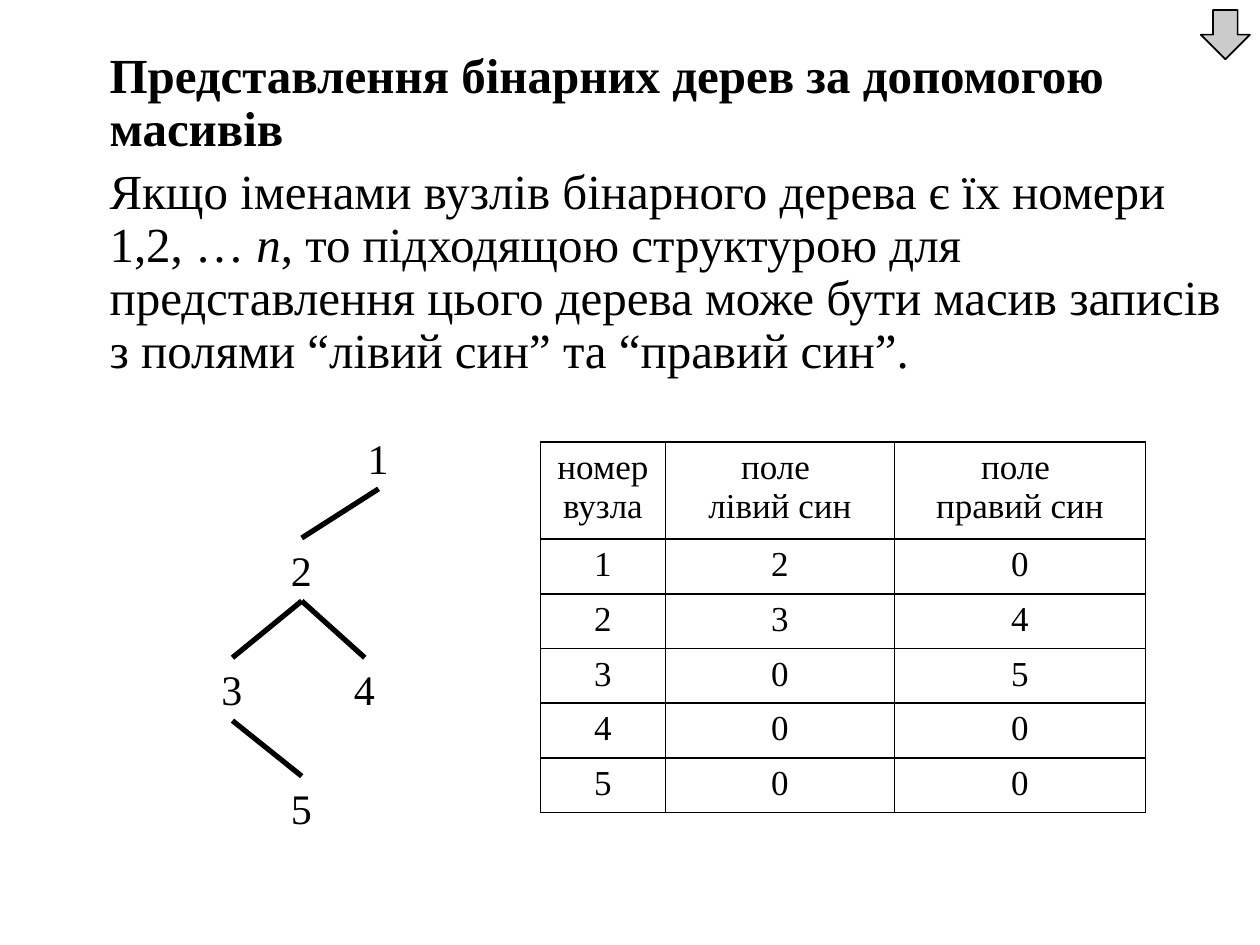
"""Build the slide on storing a binary tree in an array of records."""
import pptx
import pptx.dml.color
import pptx.enum.shapes
import pptx.enum.text
import pptx.oxml
import pptx.oxml.ns
import pptx.util
from pptx.util import Inches

BLACK = "000000"


def color(value):
    return pptx.dml.color.RGBColor.from_string(value)


def style(paragraph, size):
    for run in paragraph.runs:
        run.font.name = "Times New Roman"
        run.font.size = pptx.util.Pt(size)
        run.font.color.rgb = color(BLACK)


deck = pptx.Presentation()
deck.slide_width, deck.slide_height = Inches(10), Inches(7.5)
slide = deck.slides.add_slide(deck.slide_layouts[6])

body = slide.shapes.add_textbox(Inches(0), Inches(0.36), Inches(10), Inches(2.89)).text_frame
body.word_wrap = True
body.margin_left = body.margin_right = Inches(0.2)
heading = body.paragraphs[0]
heading.text = "\tПредставлення бінарних дерев за допомогою масивів"
heading.runs[0].font.bold = True
explanation = body.add_paragraph()
for wording in (
    "\tЯкщо іменами вузлів бінарного дерева є їх номери 1,2, … ",
    "n",
    ", то підходящою структурою для представлення цього дерева може бути масив записів "
    "з полями “лівий син” та “правий син”.",
):
    run = explanation.add_run()
    run.text = wording
    run.font.italic = wording == "n"
for paragraph in body.paragraphs:
    paragraph.line_spacing = 0.9
    paragraph.space_before = pptx.util.Pt(5.6)
    indents = paragraph._p.get_or_add_pPr()
    indents.set("marL", str(Inches(0.67)))
    indents.set("indent", str(Inches(-0.67)))
    style(paragraph, 28)

down_arrow = slide.shapes.add_shape(
    pptx.enum.shapes.MSO_SHAPE.DOWN_ARROW, Inches(9.53), Inches(0.08), Inches(0.39), Inches(0.39)
)
down_arrow.shadow.inherit = False
down_arrow.fill.solid()
down_arrow.fill.fore_color.rgb = color("CBCBCB")
down_arrow.line.color.rgb = color(BLACK)
down_arrow.line.width = pptx.util.Pt(1)

records = [
    ("номер вузла", "поле \nлівий син", "поле \nправий син"),
    (1, 2, 0),
    (2, 3, 4),
    (3, 0, 5),
    (4, 0, 0),
    (5, 0, 0),
]
table = slide.shapes.add_table(
    len(records), 3, Inches(4.29), Inches(3.51), Inches(4.8), Inches(2.93)
).table
table.first_row = table.horz_banding = False
for column, width in zip(table.columns, (0.99, 1.82, 1.99)):
    column.width = Inches(width)
for row_index, record in enumerate(records):
    table.rows[row_index].height = Inches(0.43 if row_index else 0.77)
    for column_index, value in enumerate(record):
        cell = table.cell(row_index, column_index)
        cell.text_frame.text = str(value)
        for paragraph in cell.text_frame.paragraphs:
            paragraph.alignment = pptx.enum.text.PP_ALIGN.CENTER
            style(paragraph, 20)
        properties = cell._tc.get_or_add_tcPr()
        for side in ("lnL", "lnR", "lnT", "lnB"):
            properties.append(pptx.oxml.parse_xml(
                f'<a:{side} {pptx.oxml.ns.nsdecls("a")} w="12700"><a:solidFill>'
                f'<a:srgbClr val="{BLACK}"/></a:solidFill></a:{side}>'
            ))
        cell.fill.background()

tree = slide.shapes.add_group_shape().shapes
nodes = {}
for number, left, top in (
    (1, 2.82, 3.38), (2, 2.21, 4.27), (4, 2.71, 5.22), (3, 1.66, 5.22), (5, 2.21, 6.16)
):
    node = tree.add_textbox(Inches(left), Inches(top), Inches(0.37), Inches(0.5))
    node.text_frame.word_wrap = False
    node.text_frame.auto_size = pptx.enum.text.MSO_AUTO_SIZE.SHAPE_TO_FIT_TEXT
    node.text_frame.text = str(number)
    style(node.text_frame.paragraphs[0], 24)
    nodes[number] = node

for parent, *children in records[1:]:
    for child in filter(None, children):
        start, end = nodes[parent], nodes[child]
        branch = tree.add_connector(
            pptx.enum.shapes.MSO_CONNECTOR.STRAIGHT, start.left, start.top, end.left, end.top
        )
        branch.begin_connect(start, 2)
        branch.end_connect(end, 0)
        branch.line.color.rgb = color(BLACK)
        branch.line.width = pptx.util.Pt(3)
        branch._element.spPr.append(pptx.oxml.parse_xml(
            f'<a:effectLst {pptx.oxml.ns.nsdecls("a")}/>'
        ))

deck.save("out.pptx")
